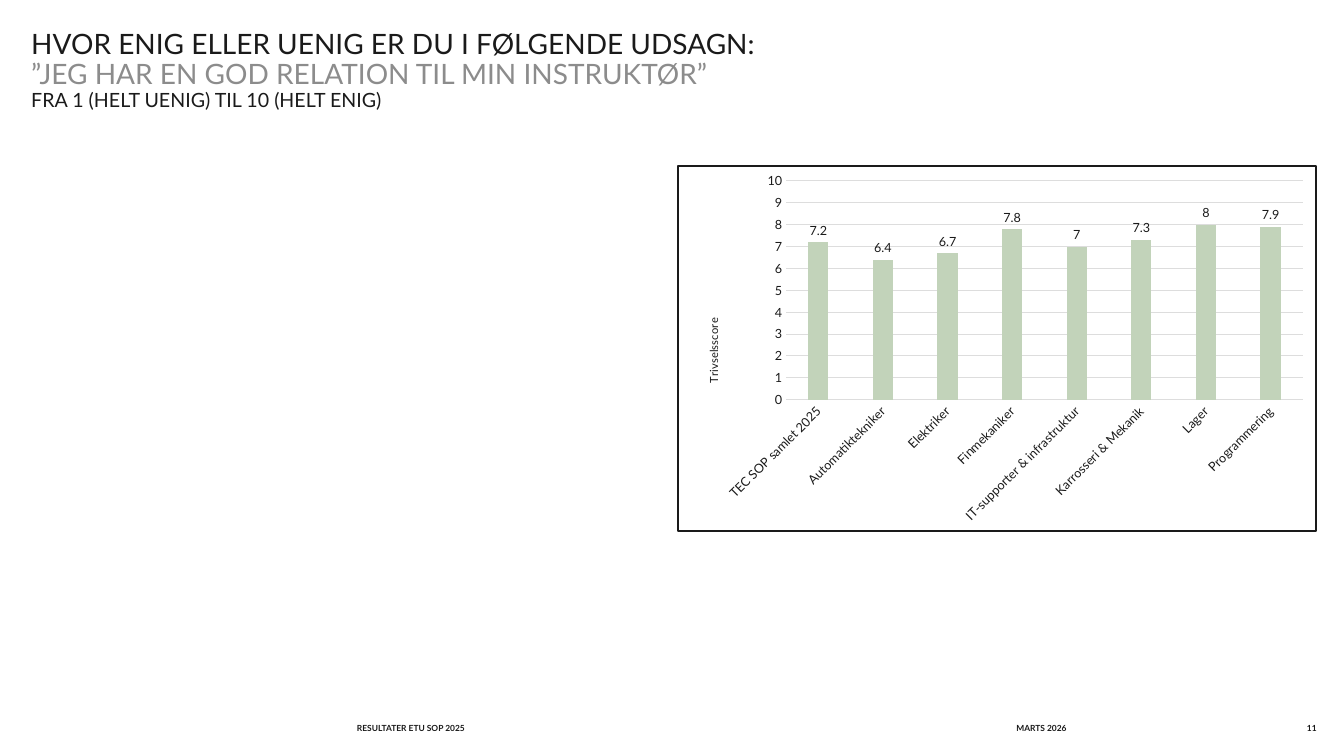
from dataclasses import dataclass

from lxml import etree
from pptx import Presentation
from pptx import util as u
from pptx.chart.data import CategoryChartData
from pptx.dml.color import RGBColor
from pptx.enum import chart as charts, text
from pptx.oxml import parse_xml
from pptx.oxml.ns import nsdecls, qn

FONT = "Lato"
INK = "1A1A1A"
GREY = "8C8C8C"
RULE = "DDDDDD"
BAR = "C2D3BA"


@dataclass
class Line:
    wording: str
    size: int
    color: str = INK
    bold: bool = False
    align: text.PP_ALIGN = text.PP_ALIGN.LEFT
    spacing: float = 1.0


@dataclass
class Footer:
    left: float
    width: float
    line: Line


HEADING = [
    Line("HVOR ENIG ELLER UENIG ER DU I FØLGENDE UDSAGN:", 20, spacing=0.9),
    Line("”JEG HAR EN GOD RELATION TIL MIN INSTRUKTØR”", 20, GREY, spacing=0.9),
    Line("FRA 1 (HELT UENIG) TIL 10 (HELT ENIG)", 14, spacing=0.9),
]
FOOTERS = [
    Footer(10.08, 1.49, Line("MARTS 2026", 6, bold=True)),
    Footer(3.54, 4.41, Line("RESULTATER ETU SOP 2025", 6, bold=True)),
    Footer(12.36, 0.7, Line("11", 6, bold=True, align=text.PP_ALIGN.RIGHT)),
]
SCORES = {
    "TEC SOP samlet 2025": 7.2,
    "Automatiktekniker": 6.4,
    "Elektriker": 6.7,
    "Finmekaniker": 7.8,
    "IT-supporter & infrastruktur": 7,
    "Karrosseri & Mekanik": 7.3,
    "Lager": 8,
    "Programmering": 7.9,
}


def rgb(color: str) -> RGBColor:
    return RGBColor.from_string(color)


def style_font(font, size: float, color: str = INK, bold: bool = False) -> None:
    font.name = FONT
    font.size = u.Pt(size)
    font.bold = bold
    font.color.rgb = rgb(color)


def place(shape, left: float, top: float, width: float, height: float) -> None:
    shape.left, shape.top = u.Inches(left), u.Inches(top)
    shape.width, shape.height = u.Inches(width), u.Inches(height)


def write_lines(frame, lines: list[Line], anchor: text.MSO_ANCHOR) -> None:
    frame.word_wrap = True
    frame.auto_size = text.MSO_AUTO_SIZE.NONE
    frame.vertical_anchor = anchor
    frame.margin_left = frame.margin_right = 0
    frame.margin_top = frame.margin_bottom = 0
    for index, line in enumerate(lines):
        paragraph = frame.add_paragraph() if index else frame.paragraphs[0]
        paragraph.text = line.wording
        paragraph.alignment = line.align
        paragraph.line_spacing = line.spacing
        paragraph.space_before = paragraph.space_after = u.Pt(0)
        style_font(paragraph.font, line.size, line.color, line.bold)


def set_layout(element, position: int, target: str = "", **fractions: float) -> None:
    for existing in element.findall(qn("c:layout")):
        element.remove(existing)
    layout = etree.Element(qn("c:layout"))
    manual = etree.SubElement(layout, qn("c:manualLayout"))
    if target:
        etree.SubElement(manual, qn("c:layoutTarget"), val=target)
    for side in ("x", "y"):
        etree.SubElement(manual, qn(f"c:{side}Mode"), val="edge")
    for side, fraction in fractions.items():
        etree.SubElement(manual, qn(f"c:{side}"), val=str(fraction))
    element.insert(position, layout)


def style_axis(axis) -> None:
    axis.major_tick_mark = axis.minor_tick_mark = charts.XL_TICK_MARK.NONE
    style_font(axis.tick_labels.font, 9)


def style_rule(line) -> None:
    line.color.rgb = rgb(RULE)
    line.width = u.Pt(0.75)


def frame_chart(chart) -> None:
    border = parse_xml(
        f'<c:spPr {nsdecls("c", "a")}>'
        '<a:solidFill><a:srgbClr val="FFFFFF"/></a:solidFill>'
        f'<a:ln w="{u.Pt(1.5)}"><a:solidFill><a:srgbClr val="{INK}"/></a:solidFill></a:ln>'
        "</c:spPr>"
    )
    chart.element.find(qn("c:chart")).addnext(border)


def add_score_chart(slide) -> None:
    data = CategoryChartData()
    data.categories = list(SCORES)
    data.add_series("Series 1", list(SCORES.values()))
    chart = slide.shapes.add_chart(
        charts.XL_CHART_TYPE.COLUMN_CLUSTERED,
        u.Inches(6.71), u.Inches(1.64), u.Inches(6.35), u.Inches(3.64), data,
    ).chart
    chart.has_title = chart.has_legend = False
    style_font(chart.font, 10)
    frame_chart(chart)

    plot = chart.plots[0]
    plot.gap_width, plot.overlap, plot.vary_by_categories = 219, -27, False
    fill = plot.series[0].format.fill
    fill.solid()
    fill.fore_color.rgb = rgb(BAR)
    plot.has_data_labels = True
    labels = plot.data_labels
    labels.show_value = True
    labels.position = charts.XL_LABEL_POSITION.OUTSIDE_END
    style_font(labels.font, 9)

    categories, values = chart.category_axis, chart.value_axis
    style_axis(categories)
    style_rule(categories.format.line)
    label_body = categories._element.find(f"{qn('c:txPr')}/{qn('a:bodyPr')}")
    label_body.set("rot", "-2700000")
    label_body.set("vert", "horz")

    style_axis(values)
    values.minimum_scale, values.maximum_scale, values.major_unit = 0, 10, 1
    values.format.line.fill.background()
    style_rule(values.major_gridlines.format.line)

    title = values.axis_title
    title.text_frame.text = "Trivselsscore"
    style_font(title.text_frame.paragraphs[0].font, 8)
    title_body = title._element.find(f".//{qn('a:bodyPr')}")
    title_body.set("rot", "-5400000")
    title_body.set("vert", "horz")
    set_layout(title._element, 1, x=0.04, y=0.41)
    plot_area = chart.element.find(f".//{qn('c:plotArea')}")
    set_layout(plot_area, 0, "inner", x=0.17, y=0.04, w=0.81, h=0.6)


def main() -> None:
    presentation = Presentation()
    presentation.slide_width = u.Inches(13.33)
    presentation.slide_height = u.Inches(7.5)
    slide = presentation.slides.add_slide(presentation.slide_layouts[5])

    heading = slide.shapes.title
    place(heading, 0.31, 0.3, 12.75, 1.17)
    write_lines(heading.text_frame, HEADING, text.MSO_ANCHOR.TOP)

    for footer in FOOTERS:
        box = slide.shapes.add_textbox(0, 0, 0, 0)
        place(box, footer.left, 7.15, footer.width, 0.15)
        write_lines(box.text_frame, [footer.line], text.MSO_ANCHOR.MIDDLE)

    add_score_chart(slide)
    presentation.save("out.pptx")


if __name__ == "__main__":
    main()
